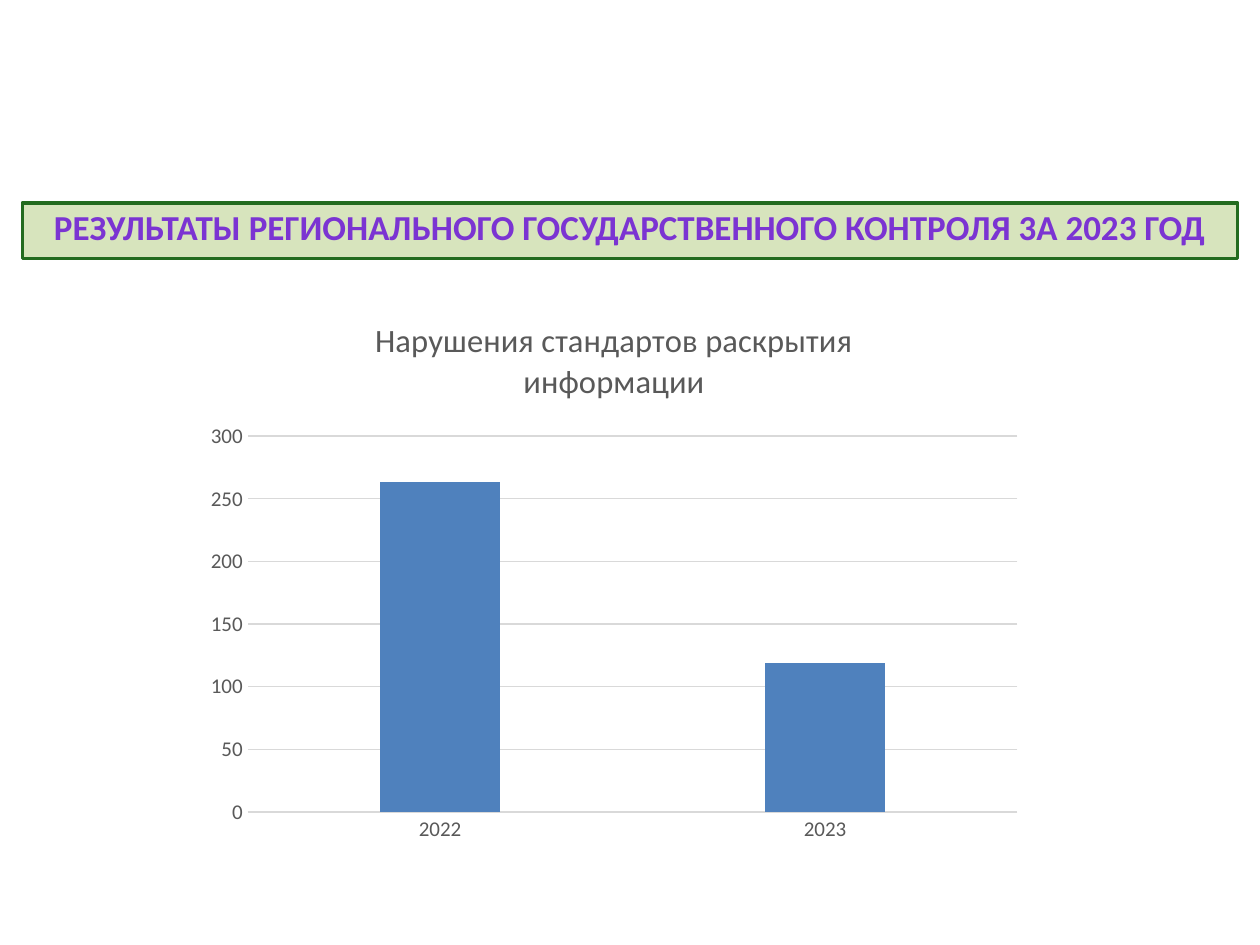
import pptx
import pptx.util
import pptx.chart.data
import pptx.dml.color
import pptx.enum.chart
import pptx.enum.text
import pptx.oxml

Cm = pptx.util.Cm
Pt = pptx.util.Pt
RGBColor = pptx.dml.color.RGBColor

HEADING = "РЕЗУЛЬТАТЫ РЕГИОНАЛЬНОГО ГОСУДАРСТВЕННОГО КОНТРОЛЯ 3А 2023 ГОД"
CHART_TITLE = "Нарушения стандартов раскрытия информации"
VIOLATIONS = {"2022": 263, "2023": 119}

FONT = "Calibri"
PALE_GREEN = RGBColor(0xD7, 0xE4, 0xBD)
DARK_GREEN = RGBColor(0x23, 0x6B, 0x1F)
PURPLE = RGBColor(0x7B, 0x34, 0xD2)
BLUE = RGBColor(0x4F, 0x81, 0xBD)
GRAY = RGBColor(0x59, 0x59, 0x59)
LIGHT_GRAY = RGBColor(0xD9, 0xD9, 0xD9)


def style_font(font, size, color, bold=False):
    font.name = FONT
    font.size = Pt(size)
    font.bold = bold
    font.color.rgb = color


def style_line(line):
    line.color.rgb = LIGHT_GRAY
    line.width = Pt(0.75)


def add_heading(page):
    heading = page.shapes.title
    heading.left, heading.top = Cm(0.45), Cm(4.09)
    heading.width, heading.height = Cm(24.5), Cm(1.12)
    heading.element.spPr.append(pptx.oxml.parse_xml(
        '<a:prstGeom xmlns:a="http://schemas.openxmlformats.org/drawingml/2006/main"'
        ' prst="roundRect"><a:avLst/></a:prstGeom>'))
    heading.fill.solid()
    heading.fill.fore_color.rgb = PALE_GREEN
    heading.line.color.rgb = DARK_GREEN
    heading.line.width = Pt(2)
    frame = heading.text_frame
    frame.text = HEADING
    frame.word_wrap = True
    frame.auto_size = pptx.enum.text.MSO_AUTO_SIZE.NONE
    frame.vertical_anchor = pptx.enum.text.MSO_ANCHOR.MIDDLE
    para = frame.paragraphs[0]
    para.alignment = pptx.enum.text.PP_ALIGN.CENTER
    para.line_spacing = 0.8
    style_font(para.runs[0].font, 20, PURPLE, bold=True)


def add_violations_chart(page):
    data = pptx.chart.data.CategoryChartData()
    data.categories = list(VIOLATIONS)
    data.add_series("Series 1", list(VIOLATIONS.values()))
    chart = page.shapes.add_chart(
        pptx.enum.chart.XL_CHART_TYPE.COLUMN_CLUSTERED,
        Cm(3.91), Cm(5.92), Cm(16.94), Cm(11.28), data).chart
    chart.font.name = FONT
    chart.font.size = Pt(10)
    chart.has_legend = False
    chart.has_title = True
    title = chart.chart_title
    title.include_in_layout = False
    title.text_frame.text = CHART_TITLE
    style_font(title.text_frame.paragraphs[0].runs[0].font, 18.6, GRAY)

    plot = chart.plots[0]
    plot.gap_width = 219
    plot.overlap = -27
    plot.vary_by_categories = False
    columns = plot.series[0].format.fill
    columns.solid()
    columns.fore_color.rgb = BLUE

    for axis in (chart.category_axis, chart.value_axis):
        axis.major_tick_mark = pptx.enum.chart.XL_TICK_MARK.NONE
        axis.minor_tick_mark = pptx.enum.chart.XL_TICK_MARK.NONE
        style_font(axis.tick_labels.font, 12, GRAY)
    style_line(chart.category_axis.format.line)
    chart.value_axis.format.line.fill.background()
    style_line(chart.value_axis.major_gridlines.format.line)


def main():
    deck = pptx.Presentation()
    deck.slide_width, deck.slide_height = Cm(25.4), Cm(19.05)
    page = deck.slides.add_slide(deck.slide_layouts[5])
    add_heading(page)
    add_violations_chart(page)
    deck.save("out.pptx")


if __name__ == "__main__":
    main()
